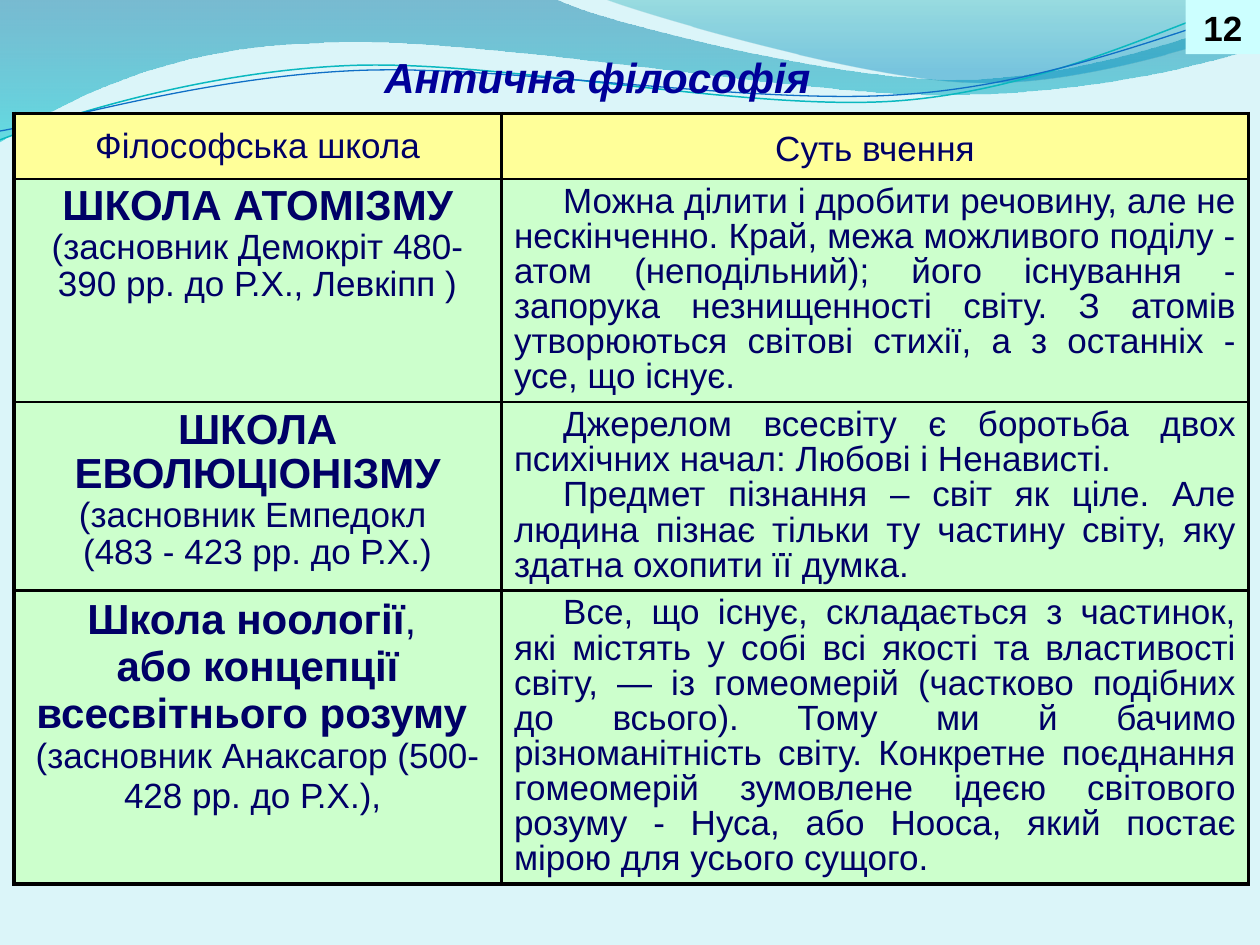
from dataclasses import dataclass
from math import cos, radians, sin

from lxml.etree import SubElement
from pptx import Presentation
from pptx.dml.color import RGBColor
from pptx.enum.shapes import MSO_SHAPE
from pptx.enum.text import MSO_ANCHOR, PP_ALIGN
from pptx.oxml.ns import qn
from pptx.util import Inches, Pt


@dataclass(frozen=True)
class Theme:
    font: str = "Arial"
    background: str = "DBF5F9"
    heading: str = "000099"
    body: str = "000066"
    black: str = "000000"
    header_fill: str = "FFFF99"
    cell_fill: str = "CCFFCC"
    badge_fill: str = "CCFFFF"
    large: int = 24
    normal: int = 20
    small: int = 16
    outer_border: float = 2.25
    inner_border: float = 1.5


THEME = Theme()
TITLE = "Антична філософія"
PAGE_NUMBER = "12"
HEADERS = [("Філософська школа", 1), ("Суть вчення", 1.15)]  # text, line spacing

# Each run is (text, size, bold); each paragraph is a list of runs.
SCHOOLS = [
    dict(
        spacing=0.95,
        school=[
            [("ШКОЛА АТОМІЗМУ", THEME.large, True)],
            [("(засновник Демокріт 480-390 рр. до Р.Х., Левкіпп )", THEME.normal, False)],
        ],
        teaching=[
            "Можна ділити і дробити речовину, але не нескінченно. Край, межа можливого "
            "поділу - атом (неподільний); його існування - запорука незнищенності світу. "
            "З атомів утворюються світові стихії, а з останніх - усе, що існує.",
        ],
    ),
    dict(
        spacing=0.95,
        school=[
            [("ШКОЛА ЕВОЛЮЦІОНІЗМУ", THEME.large, True), (" ", THEME.small, False),
             ("(засновник Емпедокл ", THEME.normal, False)],
            [("(483 - 423 рр. до Р.Х.)", THEME.normal, False)],
        ],
        teaching=[
            "Джерелом всесвіту є боротьба двох психічних начал: Любові і Ненависті. ",
            "Предмет пізнання – світ як ціле. Але людина пізнає тільки ту частину світу, "
            "яку здатна охопити її думка.",
        ],
    ),
    dict(
        spacing=1,
        school=[
            [("Школа ноології", THEME.large, True), (", ", THEME.large, False)],
            [("або концепції всесвітнього розуму ", THEME.large, True)],
            [("(засновник Анаксагор (500-428 рр. до Р.Х.), ", THEME.normal, False)],
        ],
        teaching=[
            "Все, що існує, складається з частинок, які містять у собі всі якості та "
            "властивості світу, — із гомеомерій (частково подібних до всього). Тому ми й "
            "бачимо різноманітність світу. Конкретне поєднання гомеомерій зумовлене ідеєю "
            "світового розуму - Нуса, або Нооса, який постає мірою для усього сущого.",
        ],
    ),
]
COLUMN_WIDTHS = [3.87, 5.93]
ROW_HEIGHTS = [0.52, 1.77, 1.49, 2.33]

# A curve starts at a point; 1 more point adds a line, 3 points add a Bézier curve.
WAVES = [  # curve, gradient stops (position, colour, opacity)
    ([[(0, 0)], [(4.4, -0.01)], [(4.76, 0.17), (6.64, 0.63), (7.58, 0.63)],
      [(8.53, 0.63), (9.58, 0.26), (10, 0.09)], [(10.01, 0.36)],
      [(9.83, 0.44), (8.7, 0.76), (7.46, 0.75)], [(6.22, 0.75), (3.82, 0.28), (2.57, 0.34)],
      [(1.29, 0.36), (0.46, 0.83), (-0.01, 1.13)]],
     [(0, "0074A1", 45), (1, "00C6CF", 55)]),
    ([[(4.79, -0.01)], [(5.09, 0.11), (6.82, 0.62), (7.69, 0.65)],
      [(8.56, 0.69), (9.61, 0.32), (10, 0.21)], [(10, 0)]],
     [(0, "00A1A9", 30), (0.8, "008BBF", 45)]),
]
RIPPLE_TILT = -2.7
RIPPLES = [  # curve, centre, colour, line width
    ([[(0, 1.11)], [(0.48, 0.93), (1.58, 0.57), (2.77, 0.52)],
      [(3.95, 0.47), (5.93, 0.89), (7.13, 0.8)], [(8.33, 0.71), (9.38, 0.15), (9.98, -0.02)]],
     (4.99, 0.58), "0AB8BF", 0.85),
    ([[(0, 1.04)], [(0.47, 0.96), (1.64, 0.61), (2.83, 0.56)],
      [(4.03, 0.51), (5.97, 0.84), (7.17, 0.75)], [(8.36, 0.67), (9.41, 0.21), (10, 0.06)]],
     (5, 0.59), "0F6FC6", 0.75),
]


def rgb(colour):
    return RGBColor.from_string(colour)


def write(frame, paragraphs, colour=THEME.body, align=PP_ALIGN.CENTER,
          spacing=1, indent=0, italic=False):
    for index, runs in enumerate(paragraphs):
        paragraph = frame.paragraphs[0] if index == 0 else frame.add_paragraph()
        paragraph.alignment = align
        paragraph.line_spacing = spacing
        if indent:
            properties = paragraph._p.get_or_add_pPr()
            properties.set("marL", "0")
            properties.set("indent", str(Inches(indent)))
        for text, size, bold in runs:
            run = paragraph.add_run()
            run.text = text
            run.font.name = THEME.font
            run.font.size = Pt(size)
            run.font.bold = bold
            run.font.italic = italic
            run.font.color.rgb = rgb(colour)


def add_outline(slide, curve, close):
    """Build a freeform through all points, then join point triples into Bézier curves."""
    points = [(Inches(x), Inches(y)) for segment in curve for x, y in segment]
    builder = slide.shapes.build_freeform(*points[0])
    builder.add_line_segments(points[1:], close=close)
    outline = builder.convert_to_shape()
    outline.shadow.inherit = False
    lines = iter(list(outline.element.iter(qn("a:lnTo"))))
    for segment in curve[1:]:
        first, *others = [next(lines) for _ in segment]
        if others:
            first.tag = qn("a:cubicBezTo")
            for line in others:
                first.append(line[0])
                line.getparent().remove(line)
    return outline


def add_wave(slide, curve, stops):
    wave = add_outline(slide, curve, close=True)
    wave.line.fill.background()
    wave.fill.gradient()
    wave.fill.gradient_angle = 270
    for gradient_stop, (position, colour, _) in zip(wave.fill.gradient_stops, stops):
        gradient_stop.position = position
        gradient_stop.color.rgb = rgb(colour)
    for element, (_, _, opacity) in zip(wave.element.iter(qn("a:srgbClr")), stops):
        SubElement(element, qn("a:alpha")).set("val", str(opacity * 1000))


def turn(point, centre, degrees):
    dx, dy = point[0] - centre[0], point[1] - centre[1]
    c, s = cos(radians(degrees)), sin(radians(degrees))
    return centre[0] + dx * c - dy * s, centre[1] + dx * s + dy * c


def add_ripple(slide, curve, centre, colour, width):
    level = [[turn(point, centre, -RIPPLE_TILT) for point in segment] for segment in curve]
    ripple = add_outline(slide, level, close=False)
    ripple.rotation = RIPPLE_TILT
    ripple.fill.background()
    ripple.line.color.rgb = rgb(colour)
    ripple.line.width = Pt(width)


def style_cell(cell, fill, outer_sides):
    """Set borders, then fill, in the order the file format asks for."""
    properties = cell._tc.get_or_add_tcPr()
    for side in "LRTB":
        width = THEME.outer_border if side in outer_sides else THEME.inner_border
        border = SubElement(properties, qn(f"a:ln{side}"), w=str(Pt(width)))
        SubElement(SubElement(border, qn("a:solidFill")), qn("a:srgbClr"), val=THEME.black)
    cell.fill.solid()
    cell.fill.fore_color.rgb = rgb(fill)


def add_schools_table(slide):
    rows, columns = len(ROW_HEIGHTS), len(COLUMN_WIDTHS)
    table = slide.shapes.add_table(
        rows, columns, Inches(0.11), Inches(0.9),
        Inches(sum(COLUMN_WIDTHS)), Inches(sum(ROW_HEIGHTS))).table
    for column, width in zip(table.columns, COLUMN_WIDTHS):
        column.width = Inches(width)
    for row, height in zip(table.rows, ROW_HEIGHTS):
        row.height = Inches(height)
    for r in range(rows):
        for c in range(columns):
            outer_sides = (("T" if r == 0 else "") + ("B" if r == rows - 1 else "")
                           + ("L" if c == 0 else "") + ("R" if c == columns - 1 else ""))
            style_cell(table.cell(r, c), THEME.cell_fill if r else THEME.header_fill,
                       outer_sides)
    for c, (header, spacing) in enumerate(HEADERS):
        table.cell(0, c).vertical_anchor = MSO_ANCHOR.MIDDLE
        write(table.cell(0, c).text_frame, [[(header, THEME.normal, False)]], spacing=spacing)
    for r, entry in enumerate(SCHOOLS, start=1):
        write(table.cell(r, 0).text_frame, entry["school"], spacing=entry["spacing"])
        write(table.cell(r, 1).text_frame,
              [[(text, THEME.normal, False)] for text in entry["teaching"]],
              align=PP_ALIGN.JUSTIFY, spacing=0.9, indent=0.39)


def place_title(slide):
    title = slide.shapes.title
    title.left, title.top, title.width, title.height = map(Inches, (2.95, 0.36, 3.59, 0.5))
    title.text_frame.word_wrap = False
    title.text_frame.vertical_anchor = MSO_ANCHOR.TOP
    write(title.text_frame, [[(TITLE, THEME.large, True)]],
          colour=THEME.heading, align=PP_ALIGN.LEFT, italic=True)
    title.element.getparent().append(title.element)  # bring in front of the waves


def add_page_badge(slide):
    badge = slide.shapes.add_shape(
        MSO_SHAPE.RECTANGLE, Inches(9.41), 0, Inches(0.59), Inches(0.43))
    badge.shadow.inherit = False
    badge.fill.solid()
    badge.fill.fore_color.rgb = rgb(THEME.badge_fill)
    badge.line.fill.background()
    write(badge.text_frame, [[(PAGE_NUMBER, THEME.normal, True)]], colour=THEME.black)


def main():
    deck = Presentation()
    deck.slide_width, deck.slide_height = Inches(10), Inches(7.5)
    slide = deck.slides.add_slide(deck.slide_layouts.get_by_name("Title Only"))
    slide.background.fill.solid()
    slide.background.fill.fore_color.rgb = rgb(THEME.background)
    for wave in WAVES:
        add_wave(slide, *wave)
    for ripple in RIPPLES:
        add_ripple(slide, *ripple)
    add_schools_table(slide)
    place_title(slide)
    add_page_badge(slide)
    deck.save("out.pptx")


if __name__ == "__main__":
    main()
